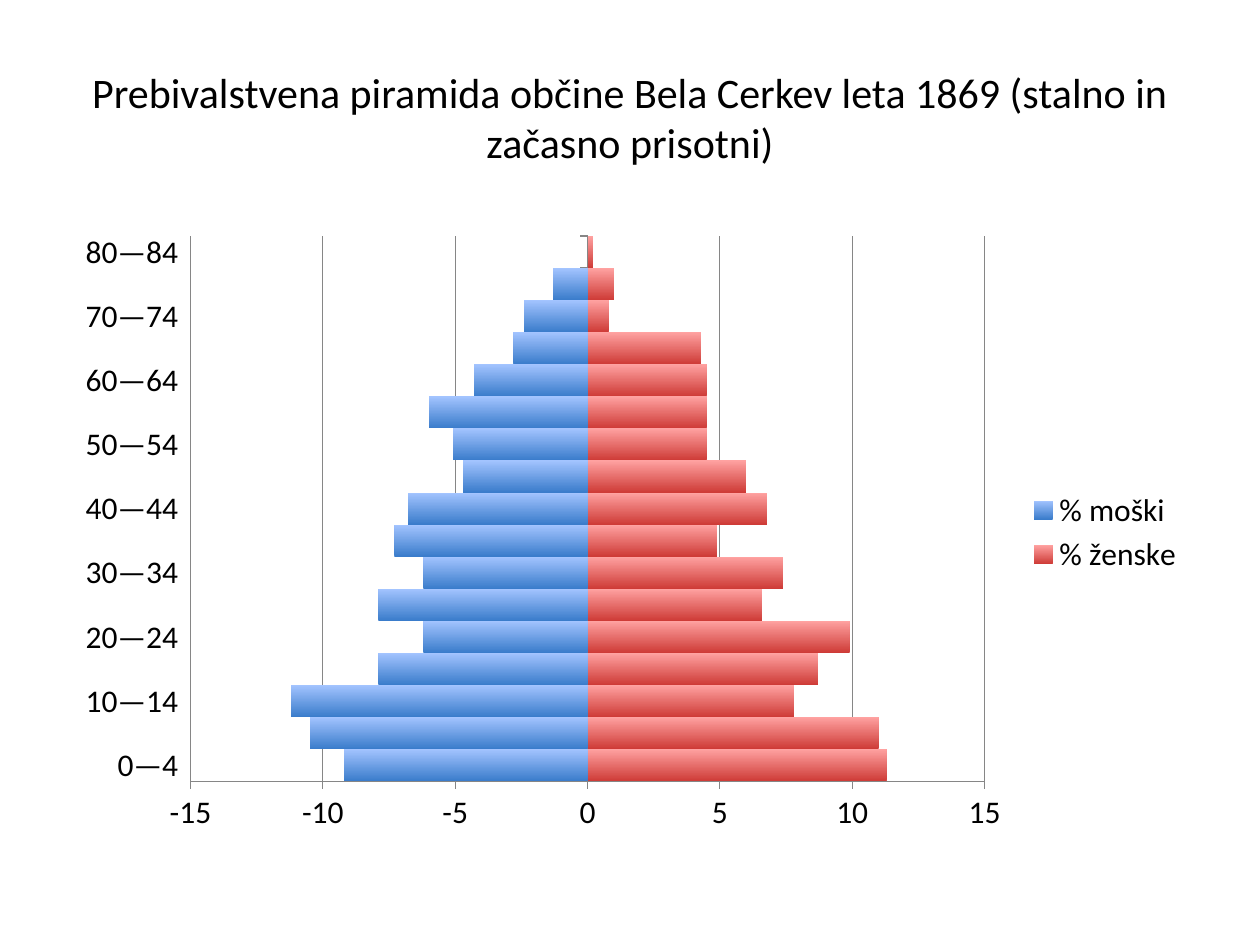
from pptx import Presentation
from pptx.chart.data import CategoryChartData
from pptx.dml.color import RGBColor
from pptx.enum.chart import XL_CHART_TYPE, XL_LEGEND_POSITION, XL_TICK_LABEL_POSITION, XL_TICK_MARK
from pptx.enum.text import MSO_ANCHOR, PP_ALIGN
from pptx.util import Pt

PX = 9144


def box(*nums):
    return [n * PX for n in nums]


def hue(code):
    return RGBColor.from_string(code)


deck = Presentation()
deck.slide_width, deck.slide_height = box(1000, 750)
slide = deck.slides.add_slide(deck.slide_layouts[6])

frame = slide.shapes.add_textbox(*box(50, 30, 900, 125)).text_frame
for key, val in {"word_wrap": True, "vertical_anchor": MSO_ANCHOR.MIDDLE}.items():
    setattr(frame, key, val)
title = frame.paragraphs[0]
title.text = "Prebivalstvena piramida občine Bela Cerkev leta 1869 (stalno in začasno prisotni)"
title.alignment = PP_ALIGN.CENTER

men = [-9.2, -10.5, -11.2, -7.9, -6.2, -7.9, -6.2, -7.3, -6.8,
       -4.7, -5.1, -6.0, -4.3, -2.8, -2.4, -1.3, 0]
women = [11.3, 11.0, 7.8, 8.7, 9.9, 6.6, 7.4, 4.9, 6.8,
         6.0, 4.5, 4.5, 4.5, 4.3, 0.8, 1.0, 0.2]
data = CategoryChartData()
data.categories = [f"{age}—{age + 4}" for age in range(0, 85, 5)]
data.add_series("% moški", men)
data.add_series("% ženske", women)
chart = slide.shapes.add_chart(XL_CHART_TYPE.BAR_STACKED, *box(50, 175, 900, 495), data).chart
chart.has_title = False
chart.has_legend = True
for key, val in {"position": XL_LEGEND_POSITION.RIGHT, "include_in_layout": False}.items():
    setattr(chart.legend, key, val)

for font, size in ((title.font, 24), (chart.font, 18)):
    for key, val in {"name": "Calibri", "size": Pt(size), "bold": False}.items():
        setattr(font, key, val)
    font.color.rgb = hue("000000")

plot = chart.plots[0]
for key, val in {"gap_width": 0, "overlap": 100, "vary_by_categories": False}.items():
    setattr(plot, key, val)

tones = [("3A7CCB", "A3C4FF"), ("CE3B37", "FFA2A1")]
for bars, pair in zip(plot.series, tones):
    bars.invert_if_negative = False
    fill = bars.format.fill
    fill.gradient()
    fill.gradient_angle = 90
    for stop, tone in zip(fill.gradient_stops, pair):
        stop.color.rgb = hue(tone)

ages, share = chart.category_axis, chart.value_axis
looks = [
    (ages, {"tick_label_position": XL_TICK_LABEL_POSITION.LOW, "has_major_gridlines": False}),
    (share, {"minimum_scale": -15, "maximum_scale": 15, "major_unit": 5,
             "has_major_gridlines": True}),
]
for axis, look in looks:
    look = {**look, "major_tick_mark": XL_TICK_MARK.OUTSIDE, "minor_tick_mark": XL_TICK_MARK.NONE}
    for key, val in look.items():
        setattr(axis, key, val)
share.tick_labels.number_format = "General"
share.tick_labels.number_format_is_linked = False
for part in (ages, share, share.major_gridlines):
    part.format.line.color.rgb = hue("868686")
    part.format.line.width = Pt(0.75)

deck.save("out.pptx")
